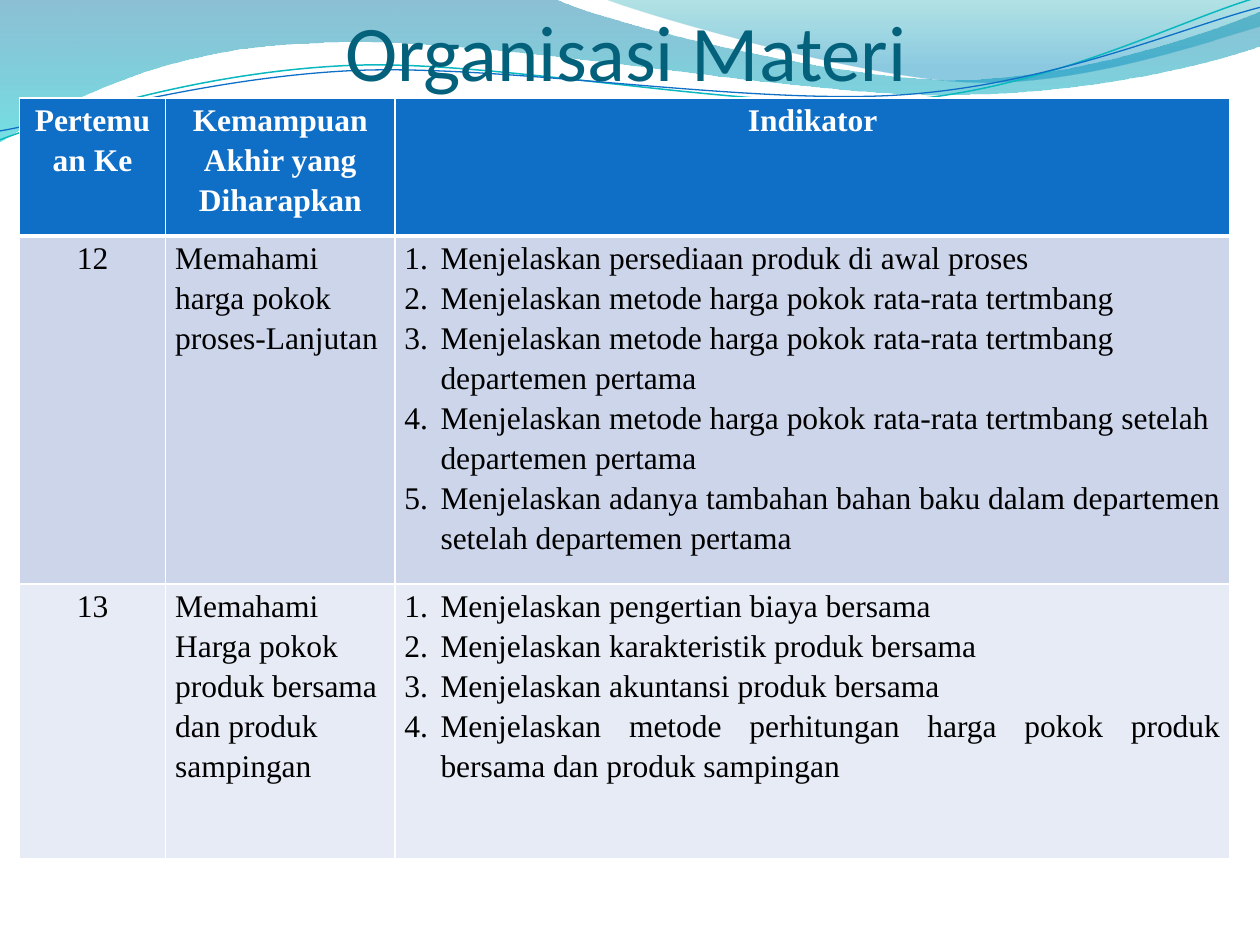
"""Build the course outline slide: waves, title and table of meetings."""
from lxml import etree
from pptx import Presentation
from pptx.dml.color import RGBColor
from pptx.enum.text import MSO_ANCHOR, PP_ALIGN
from pptx.oxml.ns import qn
from pptx.util import Cm, Pt

LEFT, MID, JUST = PP_ALIGN.LEFT, PP_ALIGN.CENTER, PP_ALIGN.JUSTIFY
BOTTOM = MSO_ANCHOR.BOTTOM

THEME = {
    "title": ("Calibri", 45, "04617B"),
    "head": ("Times New Roman", 18, "FFFFFF"),
    "body": ("Times New Roman", 18, "000000"),
    "rows": ("0F6FC6", "CCD5EA", "E7EBF5"),
    "edge": "FFFFFF",
}

TITLE = "Organisasi Materi"
HEADS = ("Pertemuan Ke", "Kemampuan Akhir yang Diharapkan", "Indikator")
MEETS = [
    ("12", "Memahami harga pokok proses-Lanjutan", LEFT, 1, [
        "Menjelaskan persediaan produk di awal proses",
        "Menjelaskan metode harga pokok rata-rata tertmbang",
        "Menjelaskan metode harga pokok rata-rata tertmbang departemen pertama",
        "Menjelaskan metode harga pokok rata-rata tertmbang setelah departemen pertama",
        "Menjelaskan adanya tambahan bahan baku dalam departemen setelah departemen pertama",
    ]),
    ("13", "Memahami Harga pokok produk bersama dan produk sampingan", JUST, 0, [
        "Menjelaskan pengertian biaya bersama",
        "Menjelaskan karakteristik produk bersama",
        "Menjelaskan akuntansi produk bersama",
        "Menjelaskan metode perhitungan harga pokok produk bersama dan produk sampingan",
    ]),
]
COLS = (2.95, 4.62, 16.84)
ROWS = (2.78, 1.55, 5.54)
TALL = 15.34

BANDS = [
    ([(0, 0), (11.18, -0.03), (12.09, 0.43, 16.87, 1.6, 19.25, 1.6),
      (21.67, 1.6, 24.33, 0.66, 25.4, 0.23), (25.43, 0.91),
      (24.97, 1.12, 22.1, 1.93, 18.95, 1.91), (15.8, 1.91, 9.7, 0.71, 6.53, 0.86),
      (3.28, 0.91, 1.17, 2.11, -0.03, 2.87)],
     [(0, "0074A1", 45), (1, "00C6CF", 55)]),
    ([(12.17, -0.03), (12.93, 0.28, 17.32, 1.57, 19.53, 1.65),
      (21.74, 1.75, 24.41, 0.81, 25.4, 0.53), (25.4, 0)],
     [(0, "00A1A9", 30), (0.8, "008BBF", 45)]),
]
WAVES = [
    ([(0, 2.82), (1.22, 2.36, 4.01, 1.45, 7.04, 1.32),
      (10.03, 1.19, 15.06, 2.26, 18.11, 2.03), (21.16, 1.8, 23.83, 0.38, 25.35, -0.05)],
     "0AB8BF", 0.85),
    ([(0, 2.64), (1.19, 2.44, 4.17, 1.55, 7.19, 1.42),
      (10.24, 1.3, 15.16, 2.13, 18.21, 1.91), (21.23, 1.7, 23.9, 0.53, 25.4, 0.15)],
     "0F6FC6", 0.75),
]


def rgb(code):
    return RGBColor.from_string(code)


def outline(slide, parts, close):
    spots = [(Cm(part[-2]), Cm(part[-1])) for part in parts]
    pen = slide.shapes.build_freeform(*spots[0])
    pen.add_line_segments(spots[1:], close=close)
    shape = pen.convert_to_shape()
    shape.shadow.inherit = False
    legs = list(shape.element.spPr.iter(qn("a:lnTo")))
    for leg, part in zip(legs, parts[1:]):
        if len(part) == 6:
            bend(shape, leg, part)
    return shape


def bend(shape, leg, part):
    curve = etree.Element(qn("a:cubicBezTo"))
    for x, y in zip(part[::2], part[1::2]):
        etree.SubElement(curve, qn("a:pt"), x=str(Cm(x) - shape.left),
                         y=str(Cm(y) - shape.top))
    leg.getparent().replace(leg, curve)


def add_band(slide, parts, stops):
    shape = outline(slide, parts, True)
    shape.line.fill.background()
    shape.fill.gradient()
    shape.fill.gradient_angle = 270
    for stop, (place, code, _) in zip(shape.fill.gradient_stops, stops):
        stop.position = place
        stop.color.rgb = rgb(code)
    for tint, (_, _, alpha) in zip(shape.element.spPr.iter(qn("a:srgbClr")), stops):
        etree.SubElement(tint, qn("a:alpha"), val=str(alpha * 1000))


def add_wave(slide, parts, code, width):
    shape = outline(slide, parts, False)
    shape.fill.background()
    shape.line.color.rgb = rgb(code)
    shape.line.width = Pt(width)


def style(para, look, align, bold=False):
    para.alignment = align
    for run in para.runs:
        run.font.name, size, code = THEME[look]
        run.font.size = Pt(size)
        run.font.color.rgb = rgb(code)
        run.font.bold = bold


def number(para, level):
    para.level = level
    props = para._p.get_or_add_pPr()
    props.set("marL", str(Cm(0.73)))
    props.set("indent", str(Cm(-0.73)))
    etree.SubElement(props, qn("a:buAutoNum"), type="arabicPeriod")


def edge(cell, row):
    props = cell._tc.get_or_add_tcPr()
    thick = {"T": 3 if row == 1 else 1, "B": 3 if row == 0 else 1}
    for spot, side in enumerate("LRTB"):
        line = etree.Element(qn("a:ln" + side), w=str(Pt(thick.get(side, 1))))
        fill = etree.SubElement(line, qn("a:solidFill"))
        etree.SubElement(fill, qn("a:srgbClr"), val=THEME["edge"])
        props.insert(spot, line)


def fill_cell(cell, row, text, align, level=None):
    cell.margin_left = cell.margin_right = Cm(0.19)
    cell.margin_top = cell.margin_bottom = 0
    cell.fill.solid()
    cell.fill.fore_color.rgb = rgb(THEME["rows"][row])
    edge(cell, row)
    cell.text_frame.text = text
    for para in cell.text_frame.paragraphs:
        style(para, "body" if row else "head", align, row == 0)
        para.line_spacing = 1.15
        if level is not None:
            number(para, level)


def add_title(slide):
    box = slide.shapes.add_textbox(Cm(1.19), 0, Cm(22.86), Cm(1.96))
    frame = box.text_frame
    frame.word_wrap = True
    frame.vertical_anchor = BOTTOM
    frame.margin_left = frame.margin_right = frame.margin_bottom = 0
    frame.text = TITLE
    style(frame.paragraphs[0], "title", MID)


def add_grid(slide):
    frame = slide.shapes.add_table(len(ROWS), len(COLS), Cm(0.39), Cm(1.98),
                                   Cm(sum(COLS)), Cm(TALL))
    grid = frame.table
    for col, width in zip(grid.columns, COLS):
        col.width = Cm(width)
    for row, height in zip(grid.rows, ROWS):
        row.height = Cm(height)
    frame.height = Cm(TALL)
    for col, head in enumerate(HEADS):
        fill_cell(grid.cell(0, col), 0, head, MID)
    for row, (week, skill, align, level, goals) in enumerate(MEETS, 1):
        fill_cell(grid.cell(row, 0), row, week, MID)
        fill_cell(grid.cell(row, 1), row, skill, LEFT)
        fill_cell(grid.cell(row, 2), row, "\n".join(goals), align, level)


def main():
    deck = Presentation()
    deck.slide_width, deck.slide_height = Cm(25.4), Cm(19.05)
    slide = deck.slides.add_slide(deck.slide_layouts[6])
    for band in BANDS:
        add_band(slide, *band)
    for wave in WAVES:
        add_wave(slide, *wave)
    add_title(slide)
    add_grid(slide)
    deck.save("out.pptx")


if __name__ == "__main__":
    main()
